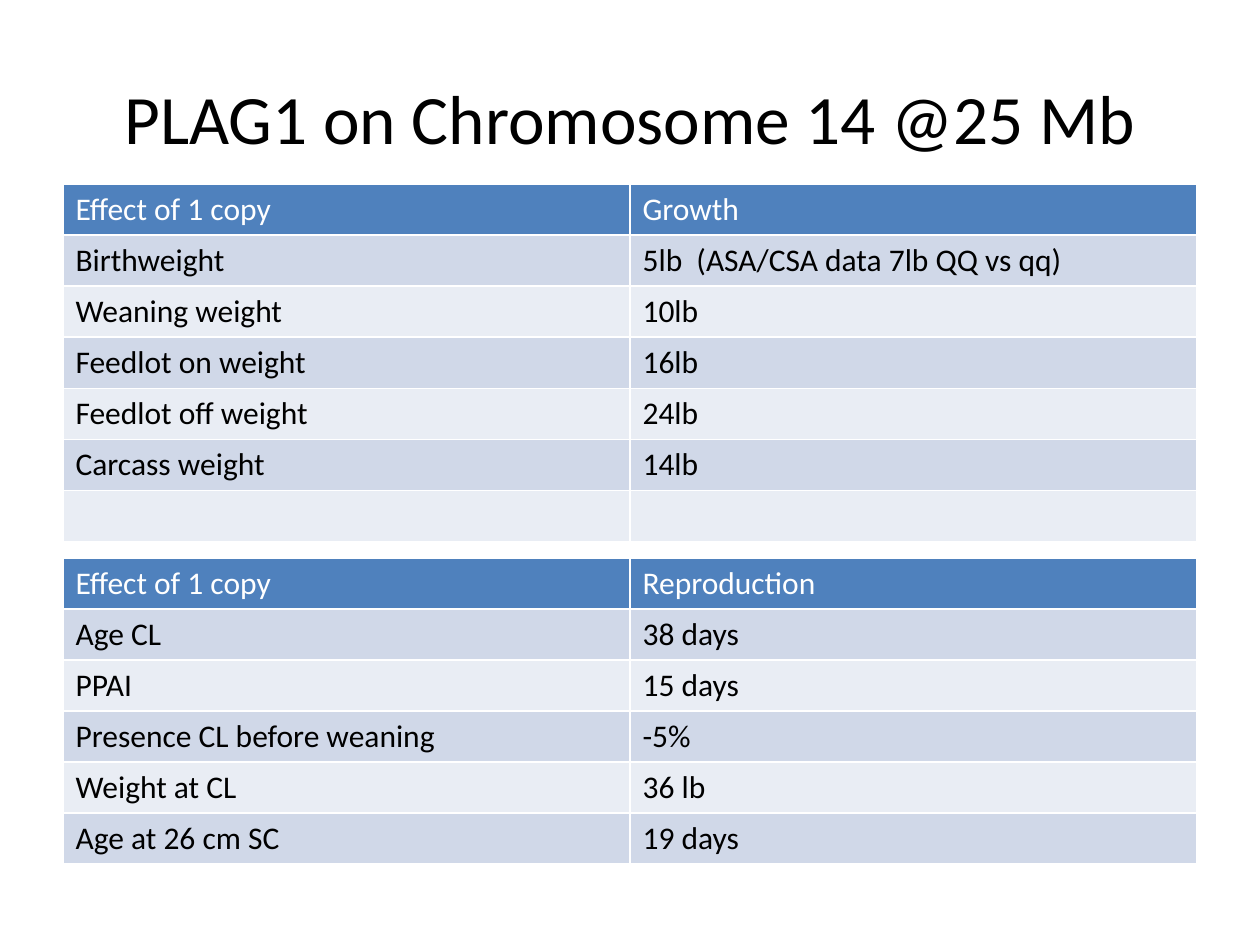
from pptx import Presentation
from pptx.dml.color import RGBColor
from pptx.enum.text import MSO_ANCHOR, PP_ALIGN
from pptx.util import Inches, Pt

BLACK = RGBColor(0x00, 0x00, 0x00)
WHITE = RGBColor(0xFF, 0xFF, 0xFF)
HEADER = RGBColor(0x4F, 0x81, 0xBD)
BANDS = [RGBColor(0xE9, 0xED, 0xF4), RGBColor(0xD0, 0xD8, 0xE8)]

growth = [
    ("Effect of 1 copy", "Growth"),
    ("Birthweight", "5lb  (ASA/CSA data 7lb QQ vs qq)"),
    ("Weaning weight", "10lb"),
    ("Feedlot on weight", "16lb"),
    ("Feedlot off weight", "24lb"),
    ("Carcass weight", "14lb"),
    ("", ""),
]
reproduction = [
    ("Effect of 1 copy", "Reproduction"),
    ("Age CL", "38 days"),
    ("PPAI", "15 days"),
    ("Presence CL before weaning", "-5%"),
    ("Weight at CL", "36 lb"),
    ("Age at 26 cm SC", "19 days"),
]

prs = Presentation()
prs.slide_width = Inches(10)
prs.slide_height = Inches(7.5)
s = prs.slides.add_slide(prs.slide_layouts[6])

title = s.shapes.add_textbox(Inches(0.5), Inches(0.3), Inches(9), Inches(1.25))
tf = title.text_frame
tf.word_wrap = True
tf.vertical_anchor = MSO_ANCHOR.MIDDLE
tf.text = "PLAG1 on Chromosome 14 @25 Mb"
p = tf.paragraphs[0]
p.alignment = PP_ALIGN.CENTER
r = p.runs[0]
r.font.name = "Calibri"
r.font.size = Pt(39.6)
r.font.color.rgb = BLACK

for rows, top, height in [(growth, 1.46, 2.84), (reproduction, 4.43, 2.43)]:
    table = s.shapes.add_table(
        len(rows), 2, Inches(0.5), Inches(top), Inches(9), Inches(height)
    ).table
    for i, row in enumerate(rows):
        for j, text in enumerate(row):
            cell = table.cell(i, j)
            cell.fill.solid()
            cell.fill.fore_color.rgb = BANDS[i % 2] if i else HEADER
            cell.text = text
            for r in cell.text_frame.paragraphs[0].runs:
                r.font.name = "Calibri"
                r.font.size = Pt(18)
                r.font.bold = False
                r.font.color.rgb = BLACK if i else WHITE

prs.save("out.pptx")
